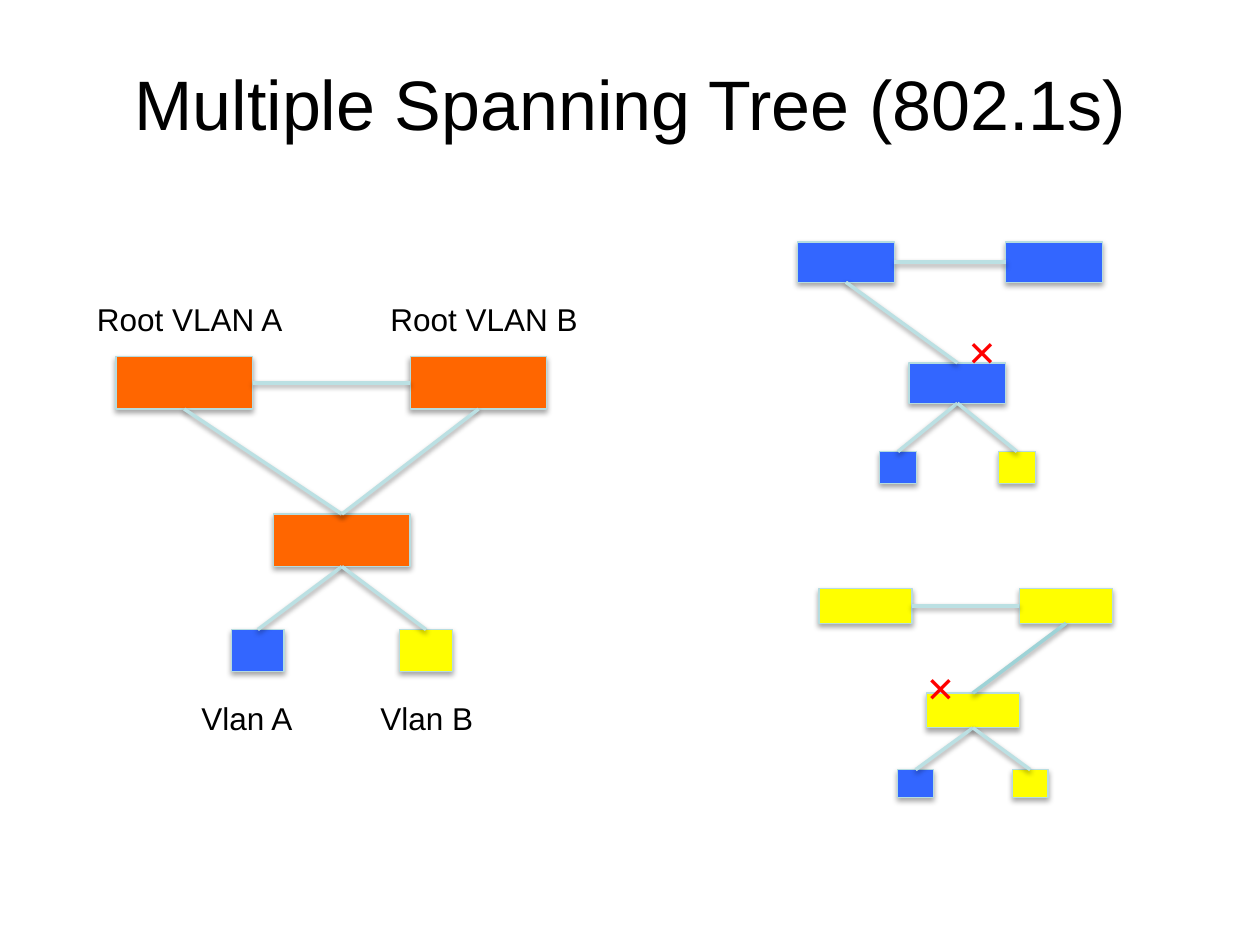
from dataclasses import dataclass

import pptx
import pptx.dml.color
import pptx.enum.shapes
import pptx.enum.text
import pptx.oxml
import pptx.oxml.ns
import pptx.util
from pptx.util import Inches

TOP, LEFT, BOTTOM, RIGHT = range(4)


@dataclass(frozen=True)
class Theme:
    font: str = "Arial"
    title_size: int = 40
    label_size: int = 18
    cross_size: int = 20
    text: str = "000000"
    orange: str = "FF6600"
    blue: str = "3366FF"
    yellow: str = "FFFF00"
    red: str = "FF0000"
    outline: str = "B6DCDF"
    link: str = "BBE0E3"
    dark_link: str = "9ED3D7"


@dataclass(frozen=True)
class Box:
    left: float
    top: float
    width: float
    height: float


THEME = Theme()

# Tree layout on a grid of 41 by 30 units: left, top, width, height
COLUMNS, ROWS = 41, 30
NODES = {
    "root_a": (0, 0, 13, 5),
    "root_b": (28, 0, 13, 5),
    "access": (15, 15, 13, 5),
    "host_a": (11, 26, 5, 4),
    "host_b": (27, 26, 5, 4),
}
LINKS = {
    "peer": ("root_a", RIGHT, "root_b", LEFT),
    "uplink_a": ("access", TOP, "root_a", BOTTOM),
    "uplink_b": ("access", TOP, "root_b", BOTTOM),
    "port_a": ("host_a", TOP, "access", BOTTOM),
    "port_b": ("host_b", TOP, "access", BOTTOM),
}


def rgb(value):
    return pptx.dml.color.RGBColor.from_string(value)


def add_shadow(item, distance, opacity):
    """Give a shape or connector, whose line is already set, a soft shadow below."""
    properties = item._element.spPr
    for old in properties.findall(pptx.oxml.ns.qn("a:effectLst")):
        properties.remove(old)
    properties.append(pptx.oxml.parse_xml(
        f'<a:effectLst {pptx.oxml.ns.nsdecls("a")}>'
        f'<a:outerShdw blurRad="40000" dist="{distance}" dir="5400000" rotWithShape="0">'
        f'<a:srgbClr val="000000"><a:alpha val="{opacity}"/></a:srgbClr>'
        '</a:outerShdw></a:effectLst>'))


def add_span(para, text, size, color, bold=False):
    span = para.add_run()
    span.text = text
    span.font.name = THEME.font
    span.font.size = pptx.util.Pt(size)
    span.font.bold = bold
    span.font.color.rgb = rgb(color)


def add_title(page, box, text):
    title = page.shapes.title
    title.left, title.top = Inches(box.left), Inches(box.top)
    title.width, title.height = Inches(box.width), Inches(box.height)
    title.text_frame.vertical_anchor = pptx.enum.text.MSO_ANCHOR.MIDDLE
    para = title.text_frame.paragraphs[0]
    para.alignment = pptx.enum.text.PP_ALIGN.CENTER
    add_span(para, text, THEME.title_size, THEME.text)


def add_label(page, box, text, size, color, bold=False):
    label = page.shapes.add_textbox(Inches(box.left), Inches(box.top),
                                    Inches(box.width), Inches(box.height))
    label.text_frame.word_wrap = False
    label.text_frame.auto_size = pptx.enum.text.MSO_AUTO_SIZE.SHAPE_TO_FIT_TEXT
    add_span(label.text_frame.paragraphs[0], text, size, color, bold)


def add_node(page, box, color):
    node = page.shapes.add_shape(pptx.enum.shapes.MSO_SHAPE.RECTANGLE,
                                 Inches(box.left), Inches(box.top),
                                 Inches(box.width), Inches(box.height))
    node.fill.solid()
    node.fill.fore_color.rgb = rgb(color)
    node.line.color.rgb = rgb(THEME.outline)
    node.line.width = pptx.util.Pt(0.75)
    add_shadow(node, 23000, 35000)
    return node


def add_link(page, start, start_side, end, end_side, color):
    link = page.shapes.add_connector(pptx.enum.shapes.MSO_CONNECTOR.STRAIGHT, 0, 0, 0, 0)
    link.begin_connect(start, start_side)
    link.end_connect(end, end_side)
    link.line.color.rgb = rgb(color)
    link.line.width = pptx.util.Pt(2)
    add_shadow(link, 20000, 38000)


def add_tree(page, box, switch_color, blocked=None, link_colors=None):
    """Draw the switches, hosts and links, leaving out the blocked uplink."""
    unit_x, unit_y = box.width / COLUMNS, box.height / ROWS
    colors = {"host_a": THEME.blue, "host_b": THEME.yellow}
    nodes = {}
    for name, (left, top, width, height) in NODES.items():
        node_box = Box(box.left + left * unit_x, box.top + top * unit_y,
                       width * unit_x, height * unit_y)
        nodes[name] = add_node(page, node_box, colors.get(name, switch_color))
    for name, (start, start_side, end, end_side) in LINKS.items():
        if name != blocked:
            color = (link_colors or {}).get(name, THEME.link)
            add_link(page, nodes[start], start_side, nodes[end], end_side, color)


def add_physical_network(page, box):
    add_tree(page, box, THEME.orange)
    above, below = box.top - 0.5, box.top + box.height + 0.17
    for text, offset, top, width in (
        ("Vlan A", 0.58, below, 0.94),
        ("Vlan B", 2, below, 0.96),
        ("Root VLAN A", -0.25, above, 1.69),
        ("Root VLAN B", 2.08, above, 1.7),
    ):
        add_label(page, Box(box.left + offset, top, width, 0.4),
                  text, THEME.label_size, THEME.text)


def add_vlan_instance(page, box, color, blocked, cross_offset, link_colors=None):
    add_tree(page, box, color, blocked, link_colors)
    cross_x, cross_y = cross_offset
    add_label(page, Box(box.left + cross_x, box.top + cross_y, 0.43, 0.44),
              "✕", THEME.cross_size, THEME.red, bold=True)


def main():
    deck = pptx.Presentation()
    deck.slide_width, deck.slide_height = Inches(10), Inches(7.5)
    page = deck.slides.add_slide(deck.slide_layouts.get_by_name("Title Only"))
    add_title(page, Box(0.5, 0.3, 9, 1.03), "Multiple Spanning Tree (802.1s)")
    add_physical_network(page, Box(0.92, 2.83, 3.42, 2.5))
    add_vlan_instance(page, Box(6.33, 1.92, 2.42, 1.92), THEME.blue,
                      "uplink_b", (1.25, 0.66))
    add_vlan_instance(page, Box(6.5, 4.67, 2.33, 1.66), THEME.yellow,
                      "uplink_a", (0.75, 0.58), {"uplink_b": THEME.dark_link})
    deck.save("out.pptx")


if __name__ == "__main__":
    main()
